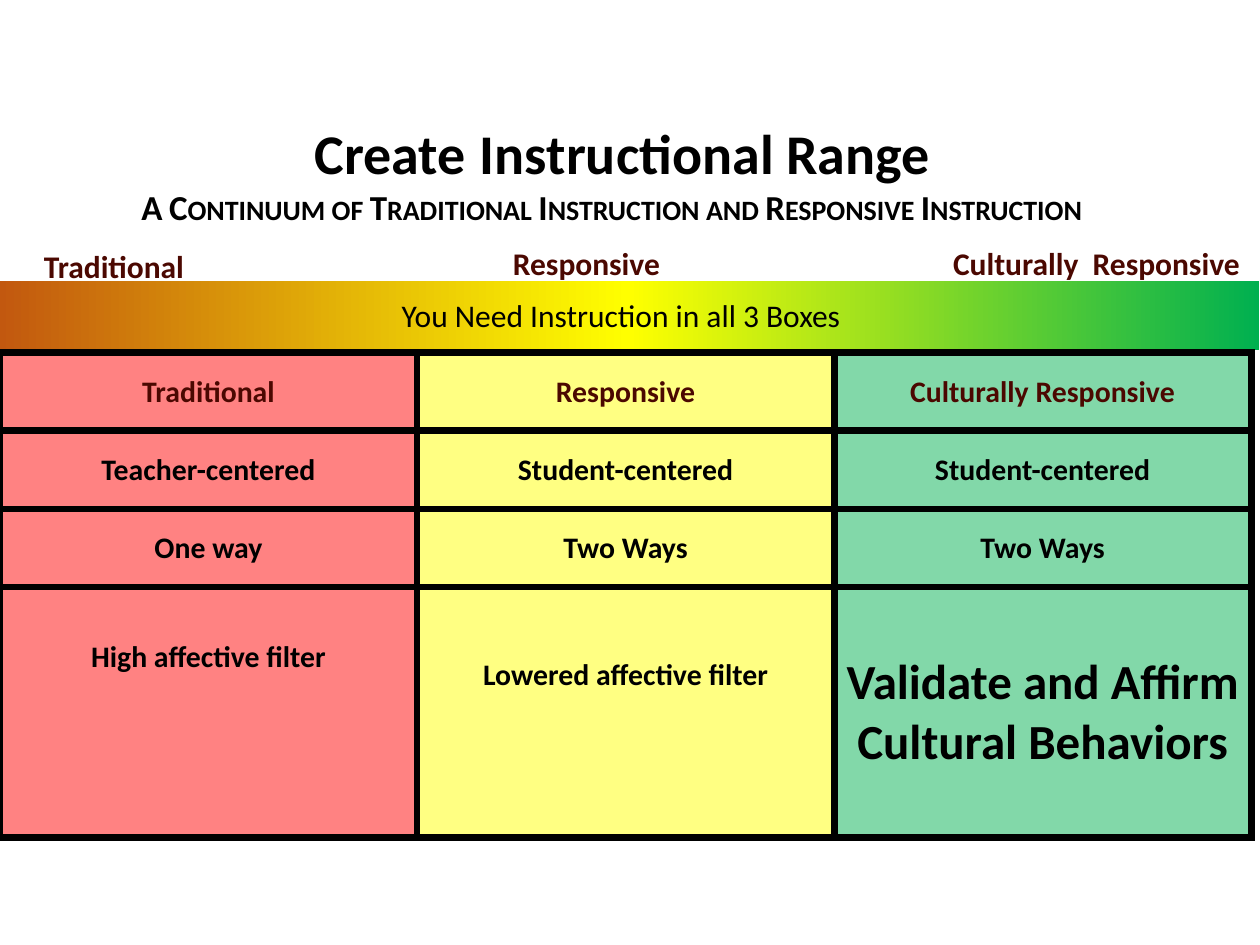
from dataclasses import dataclass

from lxml import etree
from pptx import Presentation
from pptx import util as u
from pptx.dml.color import RGBColor
from pptx.enum import shapes, text
from pptx.oxml import ns


@dataclass(frozen=True)
class Theme:
    font: str = "Calibri"
    black: str = "000000"
    maroon: str = "4B0801"
    red: str = "FF0000"
    yellow: str = "FFFF00"
    green: str = "00B050"
    orange: str = "C2580F"
    tint: int = 49
    border: float = 4.5
    title: int = 32
    title_gap: int = 36
    subtitle: int = 20
    label: int = 18
    cell: int = 17
    emphasis: int = 28


T = Theme()
CENTER, LEFT, RIGHT = (text.PP_ALIGN.CENTER, text.PP_ALIGN.LEFT,
                       text.PP_ALIGN.RIGHT)

COLUMN_FILLS = (T.red, T.yellow, T.green)
ROWS = (
    ("Traditional", "Responsive", "Culturally Responsive"),
    ("Teacher-centered", "Student-centered", "Student-centered"),
    ("One way", "Two Ways", "Two Ways"),
    ("High affective filter", "Lowered affective filter",
     "Validate and Affirm Cultural Behaviors"),
)
ROW_HEIGHTS = (0.62, 0.62, 0.62, 1.99)
LAST_ROW_LIFTS = (0.87, 0.59, 0)  # extra bottom margin raises the text


def write(tf, content, size=T.label, color=T.black, bold=True, align=CENTER,
          small_caps=False):
    """Write a string, or (string, size) pairs, as one paragraph."""
    runs = [(content, size)] if isinstance(content, str) else content
    p = tf.paragraphs[0]
    p.alignment = align
    for words, points in runs:
        r = p.add_run()
        r.text = words
        r.font.name = T.font
        r.font.size = u.Pt(points)
        r.font.bold = bold
        r.font.color.rgb = RGBColor.from_string(color)
        if small_caps:
            r.font._element.set("cap", "small")


def add_text(s, content, left, top, width, height,
             anchor=text.MSO_ANCHOR.TOP, **fmt):
    box = s.shapes.add_textbox(*map(u.Inches, (left, top, width, height)))
    tf = box.text_frame
    tf.word_wrap = True
    tf.vertical_anchor = anchor
    write(tf, content, **fmt)


def add_color(parent, color):
    return etree.SubElement(parent, ns.qn("a:srgbClr"), val=color)


def add_gradient_bar(s, colors, left, top, width, height):
    sp = s.shapes.add_shape(shapes.MSO_SHAPE.RECTANGLE,
                            *map(u.Inches, (left, top, width, height)))
    sp.shadow.inherit = False
    sp.line.fill.background()
    sp.fill.gradient()
    sp.fill.gradient_angle = 0
    stops = sp._element.spPr.find(".//" + ns.qn("a:gsLst"))
    for stop in list(stops):
        stops.remove(stop)
    for i, color in enumerate(colors):
        pos = 100000 * i // (len(colors) - 1)
        add_color(etree.SubElement(stops, ns.qn("a:gs"), pos=str(pos)), color)


def style_cell(cell, color):
    cell.fill.solid()
    cell.fill.fore_color.rgb = RGBColor.from_string(color)
    tcPr = cell._tc.get_or_add_tcPr()
    tint = tcPr.find(".//" + ns.qn("a:srgbClr"))
    etree.SubElement(tint, ns.qn("a:alpha"), val=str(T.tint * 1000))
    # Borders come before the fill
    for i, side in enumerate("LRTB"):
        ln = etree.Element(ns.qn("a:ln" + side), w=str(u.Pt(T.border)))
        add_color(etree.SubElement(ln, ns.qn("a:solidFill")), T.black)
        tcPr.insert(i, ln)


def add_comparison(s, left, top, column_width):
    n_rows, n_cols = len(ROWS), len(COLUMN_FILLS)
    frame = s.shapes.add_table(
        n_rows, n_cols, u.Inches(left), u.Inches(top),
        u.Inches(column_width * n_cols), u.Inches(sum(ROW_HEIGHTS)))
    table = frame.table
    table.first_row = table.horz_banding = False
    for column in table.columns:
        column.width = u.Inches(column_width)
    for i, (words, height) in enumerate(zip(ROWS, ROW_HEIGHTS)):
        table.rows[i].height = u.Inches(height)
        last = i == n_rows - 1
        for j, content in enumerate(words):
            cell = table.cell(i, j)
            style_cell(cell, COLUMN_FILLS[j])
            cell.vertical_anchor = text.MSO_ANCHOR.MIDDLE
            cell.margin_left = cell.margin_right = u.Inches(0.07)
            cell.margin_top = u.Inches(0.03)
            lift = LAST_ROW_LIFTS[j] if last else 0
            cell.margin_bottom = u.Inches(0.03 + lift)
            write(cell.text_frame, content,
                  size=T.emphasis if last and j == n_cols - 1 else T.cell,
                  color=T.maroon if i == 0 else T.black)


def main():
    prs = Presentation()
    prs.slide_width, prs.slide_height = u.Inches(10), u.Inches(7.5)
    s = prs.slides.add_slide(prs.slide_layouts[6])

    # Headings
    add_text(s, [("Create", T.title), (" ", T.title_gap),
                 ("Instructional Range", T.title)],
             -0.06, 0.85, 10, 0.67, anchor=text.MSO_ANCHOR.MIDDLE)
    add_text(s, "A Continuum of Traditional Instruction and "
                "Responsive Instruction",
             -0.06, 1.42, 9.83, 0.44, size=T.subtitle, small_caps=True)

    # Continuum labels and bar
    add_text(s, "Traditional", -0.08, 1.91, 1.97, 0.5, color=T.maroon)
    add_text(s, "Responsive", 3.57, 1.89, 2.17, 0.5, color=T.maroon)
    add_text(s, "Culturally  Responsive", 4.5, 1.89, 5.44, 0.48,
             color=T.maroon, align=RIGHT)
    add_gradient_bar(s, (T.orange, T.yellow, T.green), -0.01, 2.23, 10, 0.55)
    add_text(s, "You Need Instruction in all 3 Boxes", 3.09, 2.3, 3.76, 0.4,
             bold=False, align=LEFT)

    # Comparison table
    add_comparison(s, 0, 2.8, 3.31)

    prs.save("out.pptx")


if __name__ == "__main__":
    main()
